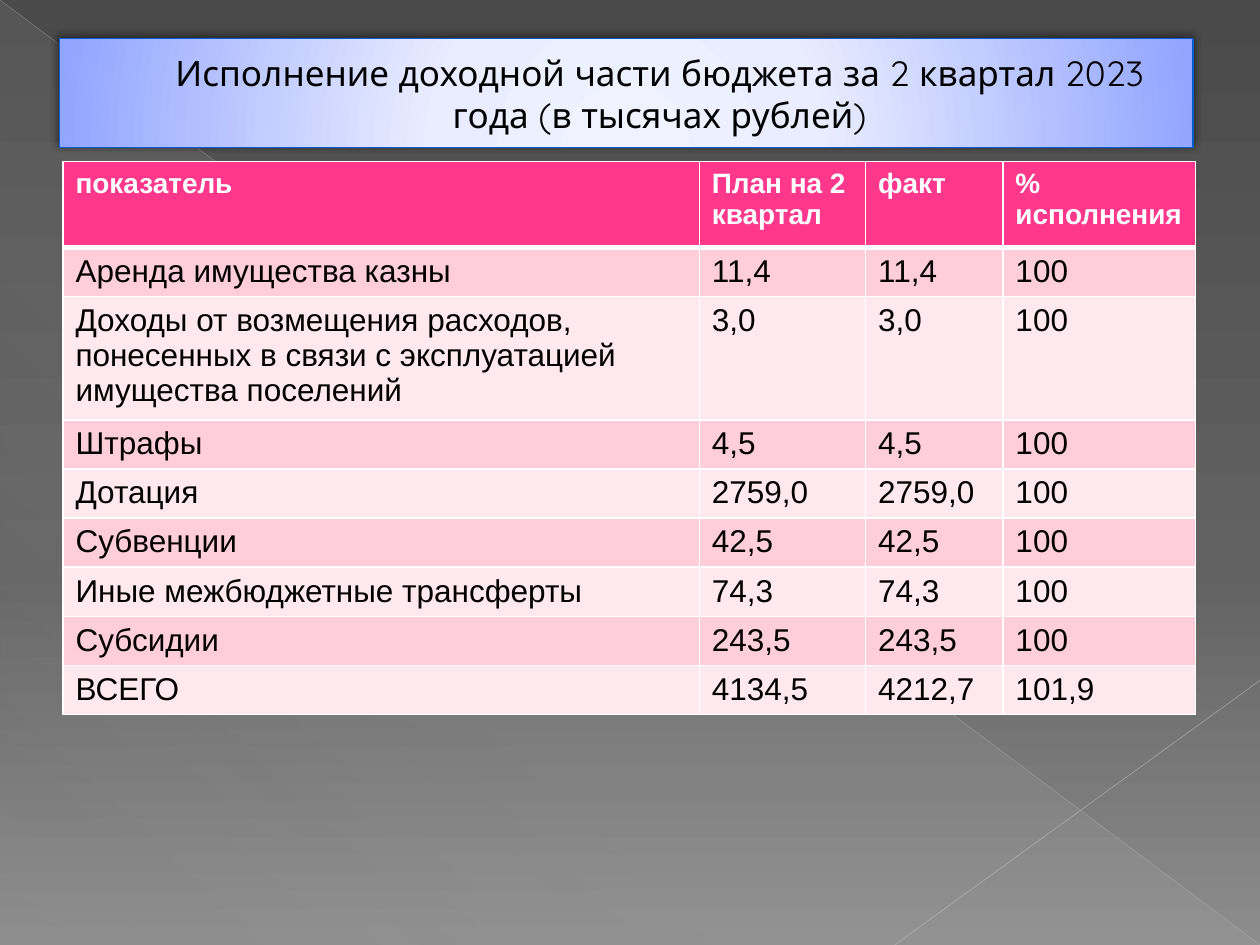
"""Build the slide on second-quarter budget revenue with its title band and table."""
from dataclasses import dataclass
from typing import NamedTuple

from lxml.etree import SubElement
from pptx import Presentation
from pptx.dml.color import RGBColor as Rgb
from pptx.enum.shapes import MSO_CONNECTOR as Connector, MSO_SHAPE as Preset
from pptx.enum.text import MSO_ANCHOR as Anchor, PP_ALIGN as Align
from pptx.oxml import parse_xml
from pptx.oxml.ns import nsdecls, qn
from pptx.util import Inches, Pt

WIDTH, HEIGHT = Inches(10), Inches(7.5)


@dataclass(frozen=True)
class Theme:
    title_font: str = "Quicksand"
    table_font: str = "Arial"
    title_size: float = 20
    header_size: float = 16
    body_size: float = 18
    ink: str = "000000"
    paper: str = "FFFFFF"
    header: str = "FF388C"
    bands: tuple = ("FFCEDA", "FFE8EE")
    band_line: str = "005BD3"
    title_outline: str = "B12761"


class Stop(NamedTuple):
    place: int
    color: str
    alpha: int = 100


class Area(NamedTuple):
    """Left, top, width and height as shares of the slide."""
    left: float
    top: float
    width: float
    height: float

    def lengths(self) -> tuple:
        return (int(self.left * WIDTH), int(self.top * HEIGHT),
                int(self.width * WIDTH), int(self.height * HEIGHT))


class Ray(NamedTuple):
    """Start and end as shares of the slide, with line looks."""
    start: tuple
    end: tuple
    color: str
    weight: float
    alpha: int


class Entry(NamedTuple):
    name: str
    plan: str
    fact: str
    percent: str
    height: float = 0.39


THEME = Theme()
LINEAR = '<a:lin ang="{}" scaled="0"/>'
RADIAL = ('<a:path path="circle"><a:fillToRect l="50000" t="155000" '
          'r="50000" b="-55000"/></a:path>')
BACKDROP = [Stop(0, "4A4A4A"), Stop(60, "626262"), Stop(100, "8C8C8C")]
VEIL = [Stop(0, "D2D2D2", 10), Stop(70, "D2D2D2", 8), Stop(100, "D2D2D2", 1)]
TITLE_BAND = [Stop(0, "F0F2FF"), Stop(34, "EAEDFF"), Stop(100, "92A5FF")]
RAYS = [Ray((0, 0), (1, 1), "BFBFBF", 0.39, 35),
        Ray((1, 0.72), (0.71, 1), "C6C6C6", 0.47, 45)]
TITLE = "Исполнение доходной части бюджета за 2 квартал 2023 года (в тысячах рублей)"
COLUMNS = (5.05, 1.32, 1.09, 1.53)
ENTRIES = [
    Entry("показатель", "План на 2 квартал", "факт", "% исполнения", 0.68),
    Entry("Аренда имущества казны", "11,4", "11,4", "100"),
    Entry("Доходы от возмещения расходов, понесенных в связи с эксплуатацией "
          "имущества поселений", "3,0", "3,0", "100", 0.98),
    Entry("Штрафы", "4,5", "4,5", "100"),
    Entry("Дотация", "2759,0", "2759,0", "100"),
    Entry("Субвенции", "42,5", "42,5", "100"),
    Entry("Иные межбюджетные трансферты", "74,3", "74,3", "100"),
    Entry("Субсидии", "243,5", "243,5", "100"),
    Entry("ВСЕГО", "4134,5", "4212,7", "101,9"),
]


def color_xml(color: str, alpha: int = 100) -> str:
    return f'<a:srgbClr val="{color}"><a:alpha val="{alpha * 1000}"/></a:srgbClr>'


def set_gradient(fill, holder, stops: list, direction: str) -> None:
    fill.solid()
    marks = "".join(f'<a:gs pos="{stop.place * 1000}">{color_xml(stop.color, stop.alpha)}</a:gs>'
                    for stop in stops)
    gradient = parse_xml(f'<a:gradFill {nsdecls("a")} rotWithShape="1">'
                         f'<a:gsLst>{marks}</a:gsLst>{direction}</a:gradFill>')
    holder.replace(holder.find(qn("a:solidFill")), gradient)


def line_element(tag: str, color: str, weight: float, alpha: int = 100):
    return parse_xml(f'<a:{tag} {nsdecls("a")} w="{Pt(weight)}">'
                     f'<a:solidFill>{color_xml(color, alpha)}</a:solidFill></a:{tag}>')


def add_span(para, text: str, font: str, size: float, color: str, bold: bool = False):
    span = para.add_run()
    span.text = text
    span.font.name, span.font.size, span.font.bold = font, Pt(size), bold
    span.font.color.rgb = Rgb.from_string(color)
    return span


def add_panel(page, preset, area: Area, stops: list, direction: str):
    panel = page.shapes.add_shape(preset, *area.lengths())
    panel.shadow.inherit = False
    panel.line.fill.background()
    set_gradient(panel.fill, panel._element.spPr, stops, direction)
    return panel


def add_ray(page, ray: Ray) -> None:
    ends = [int(share * length) for point in (ray.start, ray.end)
            for share, length in zip(point, (WIDTH, HEIGHT))]
    connector = page.shapes.add_connector(Connector.STRAIGHT, *ends)
    properties = connector._element.spPr
    properties.append(line_element("ln", ray.color, ray.weight, ray.alpha))
    SubElement(properties, qn("a:effectLst"))


def add_title(page, area: Area) -> None:
    band = add_panel(page, Preset.RECTANGLE, area, TITLE_BAND, RADIAL)
    band.line.color.rgb = Rgb.from_string(THEME.band_line)
    band.line.width = Pt(0.75)
    band._element.spPr.find(qn("a:effectLst")).append(parse_xml(
        f'<a:outerShdw {nsdecls("a")} blurRad="{Pt(5)}" dist="{Pt(2)}" dir="{245 * 60000}" '
        f'rotWithShape="0">{color_xml(THEME.ink, 50)}</a:outerShdw>'))
    frame = band.text_frame
    frame.word_wrap, frame.vertical_anchor = True, Anchor.MIDDLE
    para = frame.paragraphs[0]
    para.alignment = Align.CENTER
    para._p.get_or_add_pPr().set("marL", str(Inches(0.53)))
    span = add_span(para, TITLE, THEME.title_font, THEME.title_size, THEME.ink)
    span.font._element.insert(0, line_element("ln", THEME.title_outline, 0.5))


def fill_cell(cell, text: str, row: int) -> None:
    is_header = row == 0
    weights = {"lnL": 1, "lnR": 1, "lnT": 3 if row == 1 else 1, "lnB": 3 if is_header else 1}
    for tag, weight in weights.items():
        cell._tc.get_or_add_tcPr().append(line_element(tag, THEME.paper, weight))
    cell.fill.solid()
    color = THEME.header if is_header else THEME.bands[(row - 1) % 2]
    cell.fill.fore_color.rgb = Rgb.from_string(color)
    add_span(cell.text_frame.paragraphs[0], text, THEME.table_font,
             THEME.header_size if is_header else THEME.body_size,
             THEME.paper if is_header else THEME.ink, is_header)


def add_budget_table(page, area: Area) -> None:
    table = page.shapes.add_table(len(ENTRIES), len(COLUMNS), *area.lengths()).table
    for column, width in zip(table.columns, COLUMNS):
        column.width = Inches(width)
    for row, entry in enumerate(ENTRIES):
        table.rows[row].height = Inches(entry.height)
        for column, text in enumerate(entry[:len(COLUMNS)]):
            fill_cell(table.cell(row, column), text, row)


def main() -> None:
    deck = Presentation()
    deck.slide_width, deck.slide_height = WIDTH, HEIGHT
    page = deck.slides.add_slide(deck.slide_layouts[6])
    backdrop = page.background.fill
    backdrop.solid()
    holder = page._element.find(f'.//{qn("p:bgPr")}')
    set_gradient(backdrop, holder, BACKDROP, LINEAR.format(90 * 60000))
    add_panel(page, Preset.RIGHT_TRIANGLE, Area(0, 0, 1, 1), VEIL, LINEAR.format(133 * 60000))
    for ray in RAYS:
        add_ray(page, ray)
    add_title(page, Area(0.047, 0.041, 0.9, 0.115))
    add_budget_table(page, Area(0.05, 0.171, 0.9, 0.627))
    deck.save("out.pptx")


if __name__ == "__main__":
    main()
